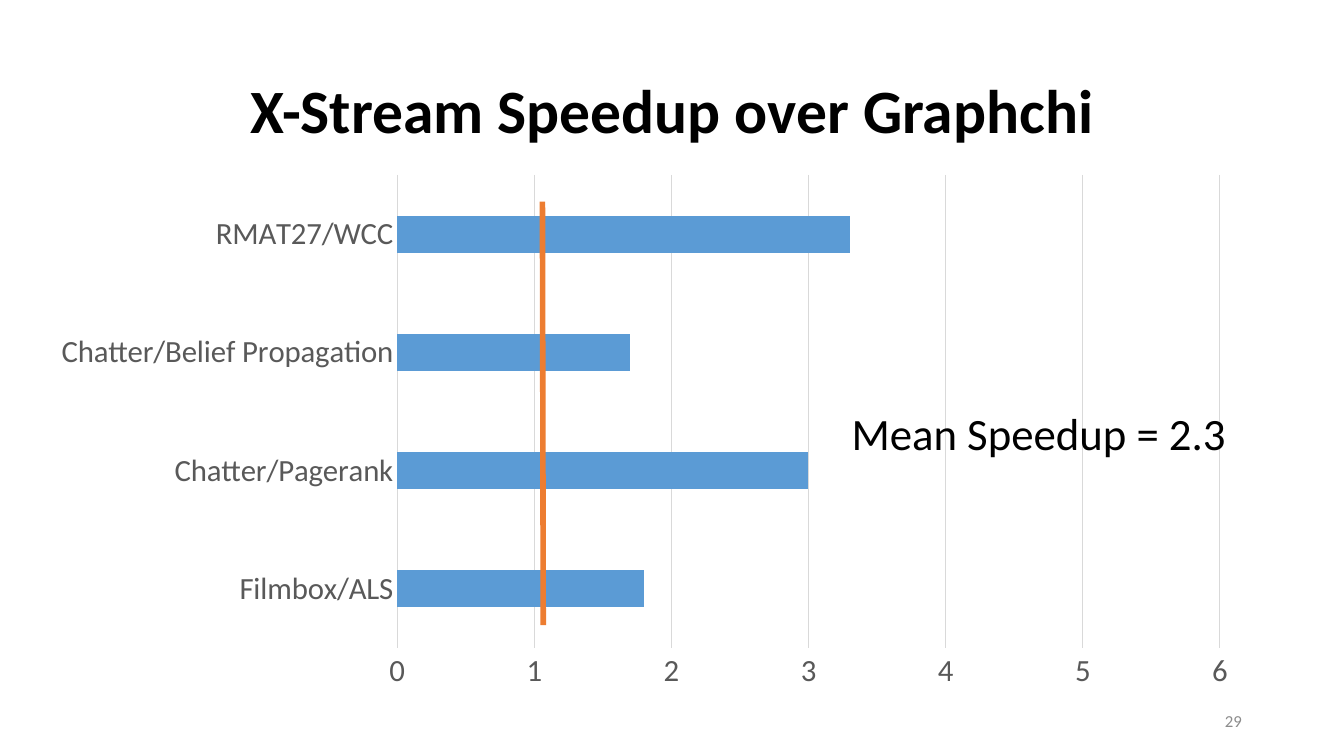
from lxml.etree import SubElement
from pptx import Presentation
from pptx.chart.data import CategoryChartData
from pptx.dml.color import RGBColor
from pptx.enum.chart import XL_CHART_TYPE, XL_TICK_MARK
from pptx.enum.shapes import MSO_CONNECTOR
from pptx.enum.text import MSO_ANCHOR, MSO_AUTO_SIZE, PP_ALIGN
from pptx.oxml.ns import qn
from pptx.util import Cm, Pt

FONT = "Calibri"
HUES = {"ink": "000000", "label": "595959", "grid": "D9D9D9",
        "bar": "5B9BD5", "mark": "ED7D31", "page": "8C8C8C"}
SPEEDS = {"Filmbox/ALS": 1.8, "Chatter/Pagerank": 3,
          "Chatter/Belief Propagation": 1.7, "RMAT27/WCC": 3.3}
TEXTS = [
    ("X-Stream Speedup over Graphchi", (2.34, 1.02, 29.21, 3.68),
     dict(size=44, bold=True, align=PP_ALIGN.CENTER, space=0.9)),
    ("29", (23.93, 17.65, 7.62, 1.02),
     dict(size=12, hue="page", align=PP_ALIGN.RIGHT)),
    ("Mean Speedup = 2.3", (21.21, 10.11, 10.06, 1.63),
     dict(size=32, anchor=MSO_ANCHOR.TOP, wrap=False)),
]
PLOT = (0.94, 4.14, 30.61, 13.51)
MARK = (13.67, 5.08, 13.69, 15.75)


def tint(name):
    return RGBColor.from_string(HUES[name])


def style(font, size, hue):
    font.name, font.size = FONT, Pt(size)
    font.color.rgb = tint(hue)


def stroke(line, hue, width):
    line.color.rgb = tint(hue)
    line.width = Pt(width)


def write(slide, text, box, size, hue="ink", bold=False, align=PP_ALIGN.LEFT,
          space=None, anchor=MSO_ANCHOR.MIDDLE, wrap=True):
    frame = slide.shapes.add_textbox(*map(Cm, box)).text_frame
    frame.word_wrap, frame.vertical_anchor = wrap, anchor
    frame.auto_size = MSO_AUTO_SIZE.NONE if wrap else MSO_AUTO_SIZE.SHAPE_TO_FIT_TEXT
    para = frame.paragraphs[0]
    para.alignment, para.line_spacing = align, space
    run = para.add_run()
    run.text, run.font.bold = text, bold
    style(run.font, size, hue)


def plot(slide):
    data = CategoryChartData()
    data.categories = list(SPEEDS)
    data.add_series("Series 1", list(SPEEDS.values()))
    chart = slide.shapes.add_chart(XL_CHART_TYPE.BAR_CLUSTERED, *map(Cm, PLOT), data).chart
    chart.has_legend = chart.has_title = False
    style(chart.font, 10, "ink")
    bars = chart.plots[0]
    bars.gap_width, bars.vary_by_categories = 219, False
    fill = bars.series[0].format.fill
    fill.solid()
    fill.fore_color.rgb = tint("bar")
    cats, vals = chart.category_axis, chart.value_axis
    for axis in (cats, vals):
        axis.major_tick_mark = axis.minor_tick_mark = XL_TICK_MARK.NONE
        style(axis.tick_labels.font, 22, "label")
    stroke(cats.format.line, "grid", 0.75)
    vals.format.line.fill.background()
    vals.minimum_scale, vals.maximum_scale, vals.major_unit = 0, 6, 1
    vals.has_major_gridlines = True
    stroke(vals.major_gridlines.format.line, "grid", 0.75)


def main():
    """Build the speedup slide."""
    deck = Presentation()
    deck.slide_width, deck.slide_height = Cm(33.87), Cm(19.05)
    slide = deck.slides.add_slide(deck.slide_layouts[6])
    plot(slide)
    mark = slide.shapes.add_connector(MSO_CONNECTOR.STRAIGHT, *map(Cm, MARK))
    stroke(mark.line, "mark", 4)
    SubElement(mark._element.spPr, qn("a:effectLst"))
    for text, box, look in TEXTS:
        write(slide, text, box, **look)
    deck.save("out.pptx")


if __name__ == "__main__":
    main()
